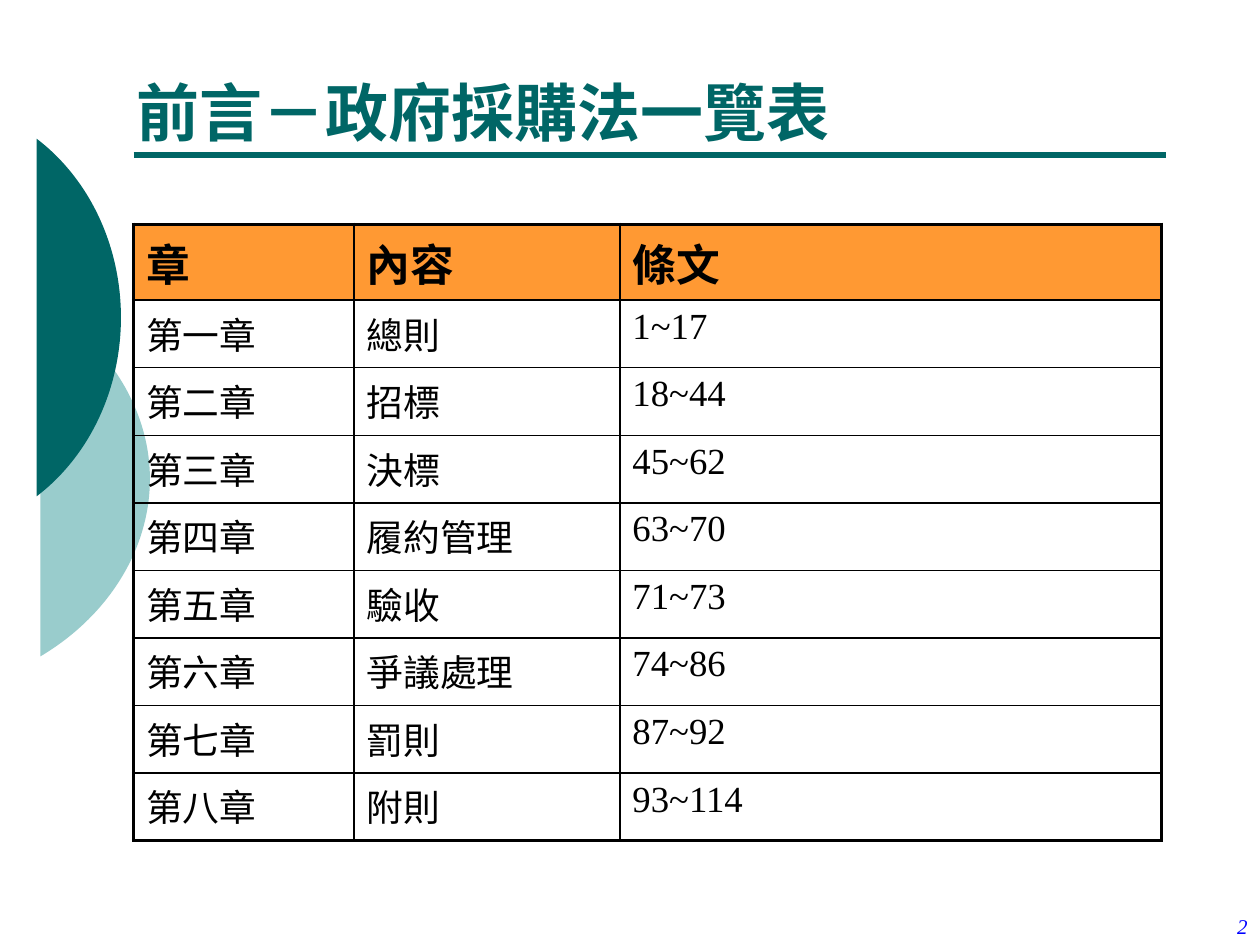
"""Build the slide that lists the chapters of the procurement act."""
from lxml import etree
from pptx import Presentation
from pptx import util as u
from pptx.dml.color import RGBColor
from pptx.enum import shapes, text
from pptx.oxml import ns

HUES = {"teal": "006666", "mist": "99CCCC", "head": "FF9933",
        "ink": "000000", "page": "0000FF"}


def hue(name):
    return RGBColor.from_string(HUES[name])


def style(para, color, **form):
    font = para.runs[0].font
    font.color.rgb = hue(color)
    for key, val in {"name": "Times New Roman", **form}.items():
        setattr(font, key, val)


deck = Presentation()
deck.slide_width, deck.slide_height = u.Inches(10), u.Inches(7.5)
slide = deck.slides.add_slide(deck.slide_layouts[5])
items = slide.shapes

ARCS = [
    ("mist", (-2.88, 2.1, 4.06, 3.42),
     [(0.32, 2.4), (0.86, 2.72), (1.19, 3.25), (1.19, 3.8),
      (1.19, 4.36), (0.86, 4.89), (0.32, 5.21)]),
    ("teal", (-2.1, 0.8, 3.05, 3.45),
     [(0.29, 1.1), (0.71, 1.42), (0.96, 1.95), (0.96, 2.52),
      (0.96, 3.09), (0.71, 3.62), (0.29, 3.94)]),
]
for color, frame, knots in ARCS:
    left, top, width, height = frame
    form = items.build_freeform(u.Inches(left), u.Inches(top))
    form.add_line_segments([(u.Inches(left + width), u.Inches(top + height))])
    arc = form.convert_to_shape()
    trace = arc._element.spPr.find(".//" + ns.qn("a:path"))
    for child in list(trace):
        trace.remove(child)
    for tag, part in (("moveTo", knots[:1]), ("cubicBezTo", knots[1:4]),
                      ("cubicBezTo", knots[4:]), ("close", [])):
        node = etree.SubElement(trace, ns.qn("a:" + tag))
        for x, y in part:
            etree.SubElement(node, ns.qn("a:pt"), x=str(u.Inches(x - left)),
                             y=str(u.Inches(y - top)))
    arc.shadow.inherit = False
    arc.fill.solid()
    arc.fill.fore_color.rgb = hue(color)
    arc.line.fill.background()

rule = items.add_connector(shapes.MSO_CONNECTOR.STRAIGHT, u.Inches(1.06), u.Inches(1.23),
                           u.Inches(9.25), u.Inches(1.23))
rule.line.color.rgb = hue("teal")
rule.line.width = u.Pt(3)
etree.SubElement(rule._element.spPr, ns.qn("a:effectLst"))

title = items.title
title.left, title.top = u.Inches(0.98), u.Inches(0.21)
title.width, title.height = u.Inches(6.38), u.Inches(1.02)
title.text = "前言－政府採購法一覽表"
title.text_frame.vertical_anchor = text.MSO_ANCHOR.BOTTOM
title.text_frame.auto_size = text.MSO_AUTO_SIZE.NONE
title.text_frame.paragraphs[0].alignment = text.PP_ALIGN.LEFT
style(title.text_frame.paragraphs[0], "teal", size=u.Pt(36), bold=True)

ROWS = [
    ("章", "內容", "條文"),
    ("第一章", "總則", "1~17"),
    ("第二章", "招標", "18~44"),
    ("第三章", "決標", "45~62"),
    ("第四章", "履約管理", "63~70"),
    ("第五章", "驗收", "71~73"),
    ("第六章", "爭議處理", "74~86"),
    ("第七章", "罰則", "87~92"),
    ("第八章", "附則", "93~114"),
]
WIDTHS = [1.75, 2.11, 4.3]
HEAD, TALL = 0.6, 4.89
last = len(ROWS) - 1
grid = items.add_table(len(ROWS), len(WIDTHS), u.Inches(1.06), u.Inches(1.78),
                       u.Inches(sum(WIDTHS)), u.Inches(TALL)).table
grid.horz_banding = grid.first_row = False
for col, width in zip(grid.columns, WIDTHS):
    col.width = u.Inches(width)
for r, row in enumerate(ROWS):
    top = r == 0
    size = 25 if top else 21
    grid.rows[r].height = u.Inches(HEAD if top else (TALL - HEAD) / last)
    for c, words in enumerate(row):
        cell = grid.cell(r, c)
        cell.text = words
        para = cell.text_frame.paragraphs[0]
        para.alignment = text.PP_ALIGN.JUSTIFY if top else text.PP_ALIGN.LEFT
        para.space_before = u.Pt(size * 0.2)
        style(para, "ink", size=u.Pt(size), bold=top)
        props = cell._tc.get_or_add_tcPr()
        edges = {"L": c == 0, "R": c == len(WIDTHS) - 1, "T": top, "B": r == last}
        for side, outer in edges.items():
            line = etree.SubElement(props, ns.qn("a:ln" + side),
                                    w=str(u.Pt(2.25 if outer else 1)))
            solid = etree.SubElement(line, ns.qn("a:solidFill"))
            etree.SubElement(solid, ns.qn("a:srgbClr"), val=HUES["ink"])
        if top:
            cell.fill.solid()
            cell.fill.fore_color.rgb = hue("head")
        else:
            cell.fill.background()

page = items.add_textbox(u.Inches(8.86), u.Inches(7.14), u.Inches(1.14), u.Inches(0.36))
page.text_frame.word_wrap = True
page.text_frame.vertical_anchor = text.MSO_ANCHOR.BOTTOM
page.text_frame.text = "2"
page.text_frame.paragraphs[0].alignment = text.PP_ALIGN.RIGHT
style(page.text_frame.paragraphs[0], "page", size=u.Pt(12), italic=True)

deck.save("out.pptx")
